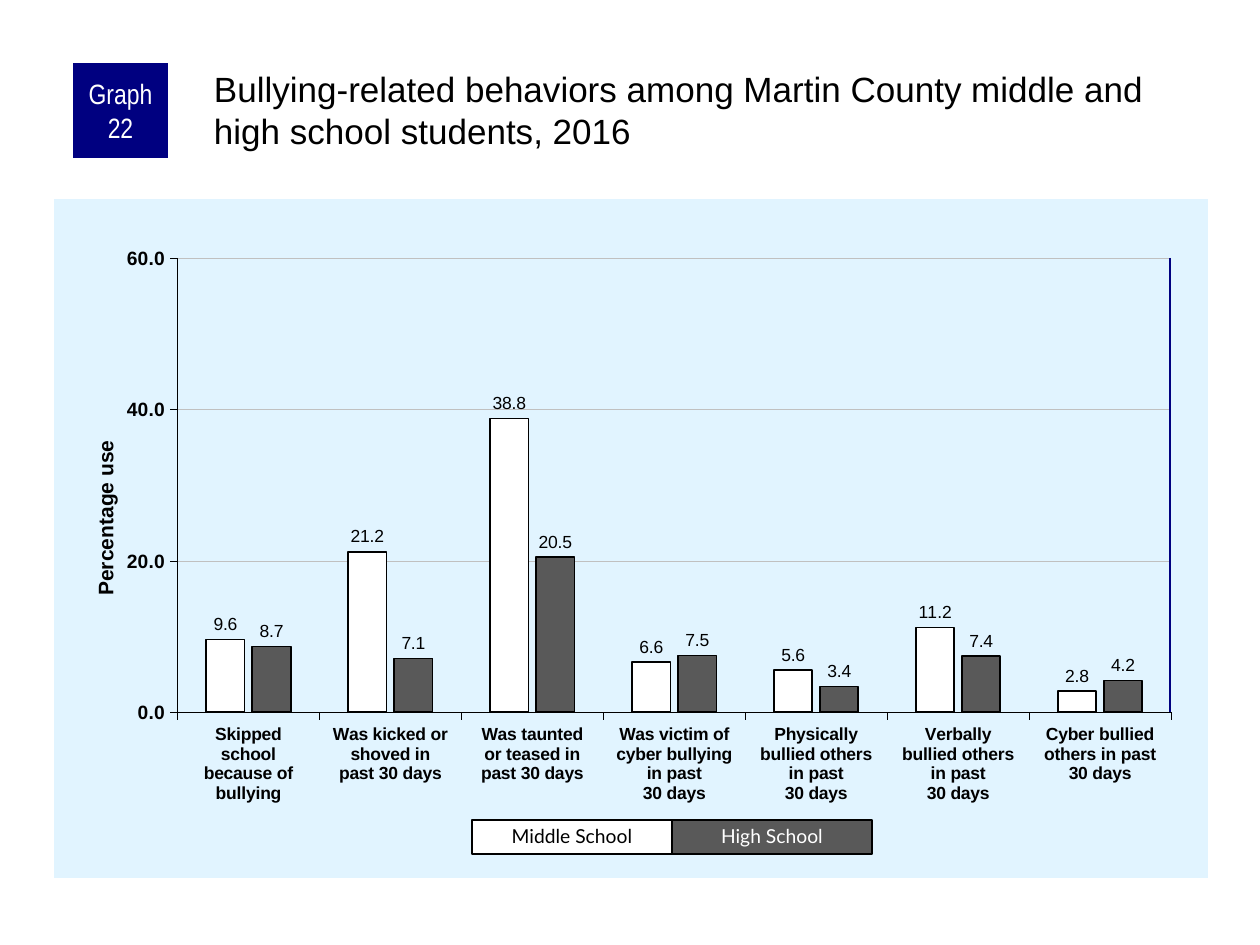
from dataclasses import dataclass

from lxml import etree
from pptx import Presentation
from pptx.chart.data import CategoryChartData
from pptx.dml.color import RGBColor
from pptx.enum.chart import XL_CHART_TYPE, XL_LABEL_POSITION, XL_TICK_MARK
from pptx.enum.shapes import MSO_CONNECTOR, MSO_SHAPE
from pptx.enum.text import MSO_ANCHOR, PP_ALIGN
from pptx.oxml import parse_xml
from pptx.oxml.ns import nsdecls, qn
from pptx.util import Emu, Pt

COLUMN = XL_CHART_TYPE.COLUMN_CLUSTERED
OUTER = XL_LABEL_POSITION.OUTSIDE_END
TICK_OUT = XL_TICK_MARK.OUTSIDE
RECT = MSO_SHAPE.RECTANGLE
STRAIGHT = MSO_CONNECTOR.STRAIGHT
TOP, MIDDLE = MSO_ANCHOR.TOP, MSO_ANCHOR.MIDDLE
LEFT, CENTER = PP_ALIGN.LEFT, PP_ALIGN.CENTER
SCALE = 914400 / 126


@dataclass(frozen=True)
class Theme:
    black: str = "000000"
    white: str = "FFFFFF"
    gray: str = "595959"
    grid: str = "C0C0C0"
    navy: str = "000080"
    panel: str = "E1F4FF"
    font: str = "Arial"
    narrow: str = "Arial Narrow"
    key: str = "Lato"
    title: float = 20
    badge: float = 16
    axis: float = 12
    scale: float = 11
    small: float = 10
    body: float = 11.5


@dataclass(frozen=True)
class Area:
    x: int
    y: int
    w: int
    h: int


@dataclass(frozen=True)
class Style:
    face: str
    size: float
    color: str
    bold: bool = False


@dataclass(frozen=True)
class Series:
    name: str
    fill: str
    ink: str
    values: tuple[float, ...]


T = Theme()
PANEL = Area(54, 199, 1154, 679)
PLOT = Area(177, 258, 994, 454)
BADGE = Area(73, 63, 95, 95)
TITLE = Area(210, 63, 998, 105)
KEY = Area(472, 820, 200, 34)
GROUPS = (
    "Skipped\nschool\nbecause of\nbullying",
    "Was kicked or\nshoved in\npast 30 days",
    "Was taunted\nor teased in\npast 30 days",
    "Was victim of\ncyber bullying\nin past\n30 days",
    "Physically\nbullied others\nin past\n30 days",
    "Verbally\nbullied others\nin past\n30 days",
    "Cyber bullied\nothers in past\n30 days",
)
SERIES = (
    Series("Middle School", T.white, T.black, (9.6, 21.2, 38.8, 6.6, 5.6, 11.2, 2.8)),
    Series("High School", T.gray, T.white, (8.7, 7.1, 20.5, 7.5, 3.4, 7.4, 4.2)),
)


def px(n: float) -> Emu:
    return Emu(round(n * SCALE))


def box(area: Area) -> tuple[Emu, ...]:
    return px(area.x), px(area.y), px(area.w), px(area.h)


def rgb(code: str) -> RGBColor:
    return RGBColor.from_string(code)


def set_font(font, style: Style) -> None:
    font.name, font.size, font.bold = style.face, Pt(style.size), style.bold
    font.color.rgb = rgb(style.color)


def set_line(line, color: str, width: float) -> None:
    line.color.rgb = rgb(color)
    line.width = Pt(width)


def set_fill(fill, color: str) -> None:
    fill.solid()
    fill.fore_color.rgb = rgb(color)


def write(shape, text: str, style: Style, pad: tuple[int, int],
          align=CENTER, anchor=MIDDLE, space: float = 1.0) -> None:
    """Fill a shape with one run; pad is the side and top inset."""
    frame = shape.text_frame
    frame.word_wrap, frame.vertical_anchor = True, anchor
    frame.margin_left = frame.margin_right = px(pad[0])
    frame.margin_top = frame.margin_bottom = px(pad[1])
    para = frame.paragraphs[0]
    para.alignment, para.line_spacing = align, space
    run = para.add_run()
    run.text = text
    set_font(run.font, style)


def add_box(slide, area: Area, fill: str, edge: str = ""):
    shape = slide.shapes.add_shape(RECT, *box(area))
    shape.shadow.inherit = False
    set_fill(shape.fill, fill)
    if edge:
        set_line(shape.line, edge, 0.75)
    else:
        shape.line.fill.background()
    return shape


def place(node, index: int, **spots) -> None:
    """Give a chart part a fixed layout, as shares of the chart."""
    for old in node.findall(qn("c:layout")):
        node.remove(old)
    layout = etree.Element(qn("c:layout"))
    manual = etree.SubElement(layout, qn("c:manualLayout"))
    for tag, value in spots.items():
        etree.SubElement(manual, qn(f"c:{tag}")).set("val", str(value))
    node.insert(index, layout)


def add_axis(axis, size: float) -> None:
    axis.major_tick_mark = TICK_OUT
    set_line(axis.format.line, T.black, 0.25)
    set_font(axis.tick_labels.font, Style(T.font, size, T.black, True))


def add_graph(slide) -> None:
    data = CategoryChartData(number_format="0.0")
    data.categories = GROUPS
    for item in SERIES:
        data.add_series(item.name, item.values)
    chart = slide.shapes.add_chart(COLUMN, *box(PANEL), data).chart
    chart.has_legend = chart.has_title = False
    set_font(chart.font, Style(T.font, T.body, T.black))
    root = chart.element.find(qn("c:chart"))
    root.addnext(parse_xml(
        f'<c:spPr {nsdecls("c", "a")}><a:solidFill><a:srgbClr val="{T.panel}"/>'
        "</a:solidFill><a:ln><a:noFill/></a:ln></c:spPr>"))
    place(root.find(qn("c:plotArea")), 0, layoutTarget="inner", xMode="edge",
          yMode="edge", x=0.107, y=0.087, w=0.861, h=0.669)

    add_axis(chart.category_axis, T.small)
    scale = chart.value_axis
    add_axis(scale, T.scale)
    scale.minimum_scale, scale.maximum_scale, scale.major_unit = 0, 60, 20
    scale.tick_labels.number_format = "0.0"
    scale.tick_labels.number_format_is_linked = False
    set_line(scale.major_gridlines.format.line, T.grid, 0.25)
    title = scale.axis_title
    run = title.text_frame.paragraphs[0].add_run()
    run.text = "Percentage use"
    set_font(run.font, Style(T.font, T.axis, T.black, True))
    node = title.text_frame._txBody.find(qn("a:bodyPr"))
    node.set("rot", "-5400000")
    node.set("vert", "horz")
    place(scale.axis_title._element, 1, xMode="edge", yMode="edge", x=0.03, y=0.35)

    plot = chart.plots[0]
    plot.gap_width, plot.overlap, plot.vary_by_categories = 150, -20, False
    for item, bars in zip(SERIES, plot.series):
        set_fill(bars.format.fill, item.fill)
        set_line(bars.format.line, T.black, 1)
        bars.invert_if_negative = False
        labels = bars.data_labels
        labels.show_value, labels.position = True, OUTER
        labels.number_format, labels.number_format_is_linked = "0.0", False
        set_font(labels.font, Style(T.font, T.small, T.black))


def add_edge(slide) -> None:
    """Close the plot on its right side."""
    x, end = px(PLOT.x + PLOT.w - 1), px(PLOT.y + PLOT.h)
    line = slide.shapes.add_connector(STRAIGHT, x, px(PLOT.y), x, end)
    set_line(line.line, T.navy, 1)
    etree.SubElement(line._element.spPr, qn("a:effectLst"))


def main() -> None:
    deck = Presentation()
    deck.slide_width, deck.slide_height = px(1260), px(945)
    slide = deck.slides.add_slide(deck.slide_layouts[6])
    add_graph(slide)
    add_edge(slide)
    write(add_box(slide, BADGE, T.navy), "Graph 22",
          Style(T.narrow, T.badge, T.white), (6, 0))
    write(slide.shapes.add_textbox(*box(TITLE)),
          "Bullying-related behaviors among Martin County middle and high school students, 2016",
          Style(T.font, T.title, T.black), (4, 4), LEFT, TOP)
    for i, item in enumerate(SERIES):
        area = Area(KEY.x + i * KEY.w, KEY.y, KEY.w, KEY.h)
        write(add_box(slide, area, item.fill, T.black), item.name,
              Style(T.key, T.scale, item.ink), (12, 6), space=0.9)
    deck.save("out.pptx")


if __name__ == "__main__":
    main()
